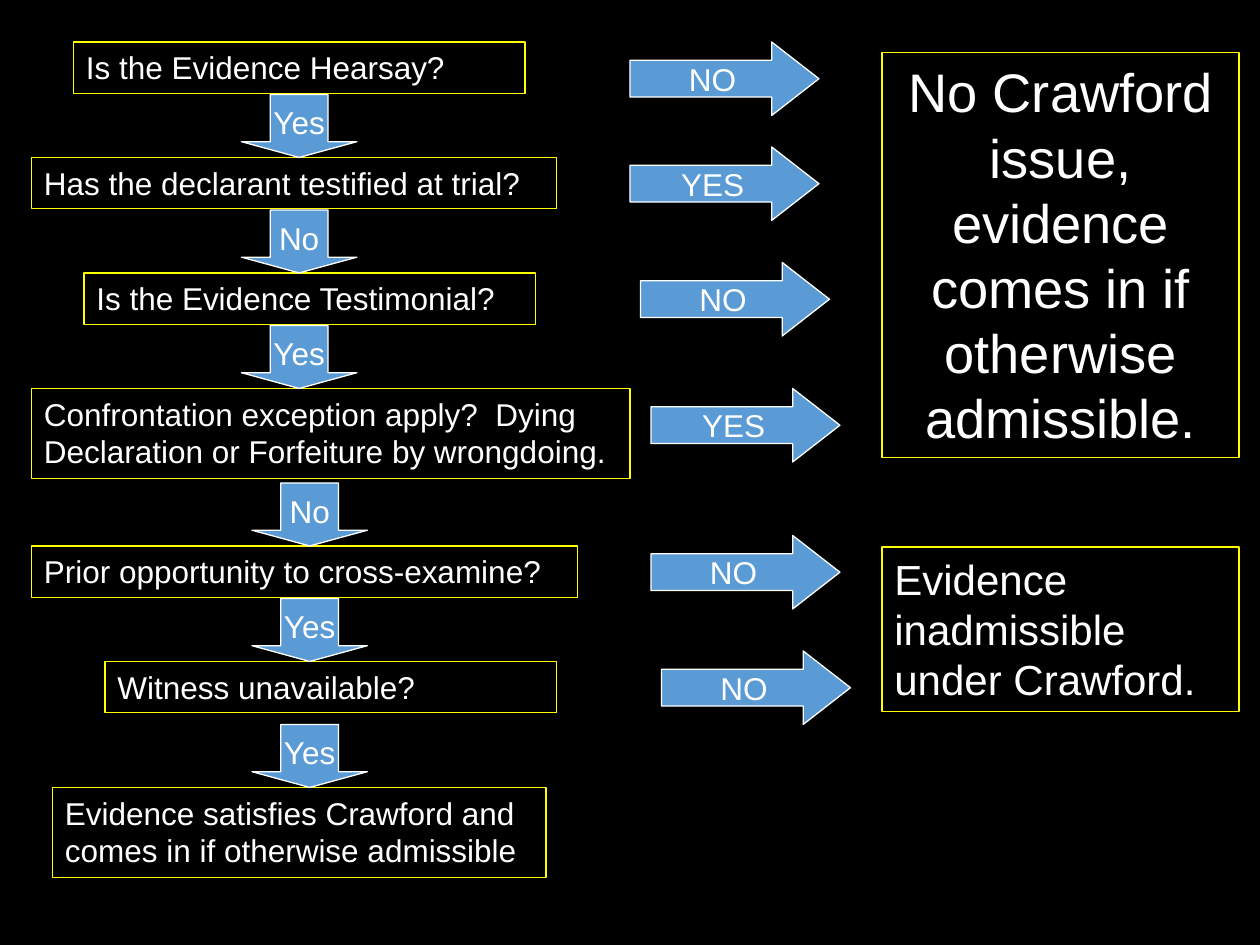
from dataclasses import dataclass

import pptx
import pptx.dml.color
import pptx.enum.shapes
import pptx.enum.text
import pptx.util

Pt = pptx.util.Pt
Rgb = pptx.dml.color.RGBColor
Kind = pptx.enum.shapes.MSO_SHAPE
Align = pptx.enum.text.PP_ALIGN
Anchor = pptx.enum.text.MSO_ANCHOR
Fit = pptx.enum.text.MSO_AUTO_SIZE


@dataclass(frozen=True)
class Theme:
    back: Rgb = Rgb(0, 0, 0)
    text: Rgb = Rgb(255, 255, 255)
    edge: Rgb = Rgb(255, 255, 0)
    fill: Rgb = Rgb(0x5B, 0x9B, 0xD5)
    font: str = "Arial"
    body: float = 18
    note: float = 24
    large: float = 31
    line: float = 0.75


@dataclass(frozen=True)
class Box:
    text: str
    left: float
    top: float
    width: float
    height: float = 29.3
    size: float = Theme.body
    align: Align = Align.LEFT


@dataclass(frozen=True)
class Arrow:
    text: str
    left: float
    top: float


@dataclass(frozen=True)
class Style:
    kind: Kind
    width: float
    height: float
    head: float


THEME = Theme()
RIGHT = Style(Kind.RIGHT_ARROW, 108, 42, 0.643)
DOWN = Style(Kind.DOWN_ARROW, 66, 36, 0.25)
TALL = 51.3  # height of a two-line question

# Questions from top to bottom
STEPS = [
    Box("Is the Evidence Hearsay?", 42, 24, 258),
    Box("Has the declarant testified at trial?", 18, 90, 300),
    Box("Is the Evidence Testimonial?", 48, 156, 258),
    Box("Confrontation exception apply?  Dying Declaration or Forfeiture by wrongdoing.",
        18, 222, 342, TALL),
    Box("Prior opportunity to cross-examine?", 18, 312, 312),
    Box("Witness unavailable?", 60, 378, 258),
    Box("Evidence satisfies Crawford and comes in if otherwise admissible",
        30, 450, 282, TALL),
]

# Outcomes on the right
ENDS = [
    Box("No Crawford issue, evidence comes in if otherwise admissible.",
        504, 30, 204, 231.6, THEME.large, Align.CENTER),
    Box("Evidence inadmissible under Crawford.", 504, 312.5, 204, 94.2, THEME.note),
]

# Answers that leave the chain
EXITS = [
    Arrow("NO", 360, 24), Arrow("YES", 360, 84), Arrow("NO", 366, 150),
    Arrow("YES", 372, 222), Arrow("NO", 372, 306), Arrow("NO", 378, 372),
]

# Answers that lead to the next question
LINKS = [
    Arrow("Yes", 138, 54), Arrow("No", 138, 120), Arrow("Yes", 138, 186),
    Arrow("No", 144, 276), Arrow("Yes", 144, 342), Arrow("Yes", 144, 414),
]


def write(shape, text: str, size: float, align: Align) -> None:
    frame = shape.text_frame
    frame.text = text
    para = frame.paragraphs[0]
    para.alignment = align
    font = para.runs[0].font
    font.name = THEME.font
    font.size = Pt(size)
    font.color.rgb = THEME.text


def trim(shape, edge: Rgb) -> None:
    shape.shadow.inherit = False
    shape.line.color.rgb = edge
    shape.line.width = Pt(THEME.line)


def draw_box(slide, box: Box) -> None:
    shape = slide.shapes.add_shape(
        Kind.RECTANGLE, Pt(box.left), Pt(box.top), Pt(box.width), Pt(box.height))
    shape.fill.background()
    trim(shape, THEME.edge)
    write(shape, box.text, box.size, box.align)
    frame = shape.text_frame
    frame.word_wrap = True
    frame.auto_size = Fit.SHAPE_TO_FIT_TEXT
    frame.vertical_anchor = Anchor.TOP


def draw_arrow(slide, arrow: Arrow, style: Style) -> None:
    shape = slide.shapes.add_shape(
        style.kind, Pt(arrow.left), Pt(arrow.top), Pt(style.width), Pt(style.height))
    shape.adjustments[0] = 0.5
    shape.adjustments[1] = style.head
    shape.fill.solid()
    shape.fill.fore_color.rgb = THEME.fill
    trim(shape, THEME.text)
    write(shape, arrow.text, THEME.body, Align.CENTER)
    shape.text_frame.word_wrap = False
    shape.text_frame.vertical_anchor = Anchor.MIDDLE


def main() -> None:
    deck = pptx.Presentation()
    deck.slide_width, deck.slide_height = Pt(720), Pt(540)
    # The slide has no title, so the blank layout fits
    slide = deck.slides.add_slide(deck.slide_layouts[6])
    slide.background.fill.solid()
    slide.background.fill.fore_color.rgb = THEME.back

    for box in STEPS + ENDS:
        draw_box(slide, box)
    for style, group in ((RIGHT, EXITS), (DOWN, LINKS)):
        for arrow in group:
            draw_arrow(slide, arrow, style)
    deck.save("out.pptx")


if __name__ == "__main__":
    main()
